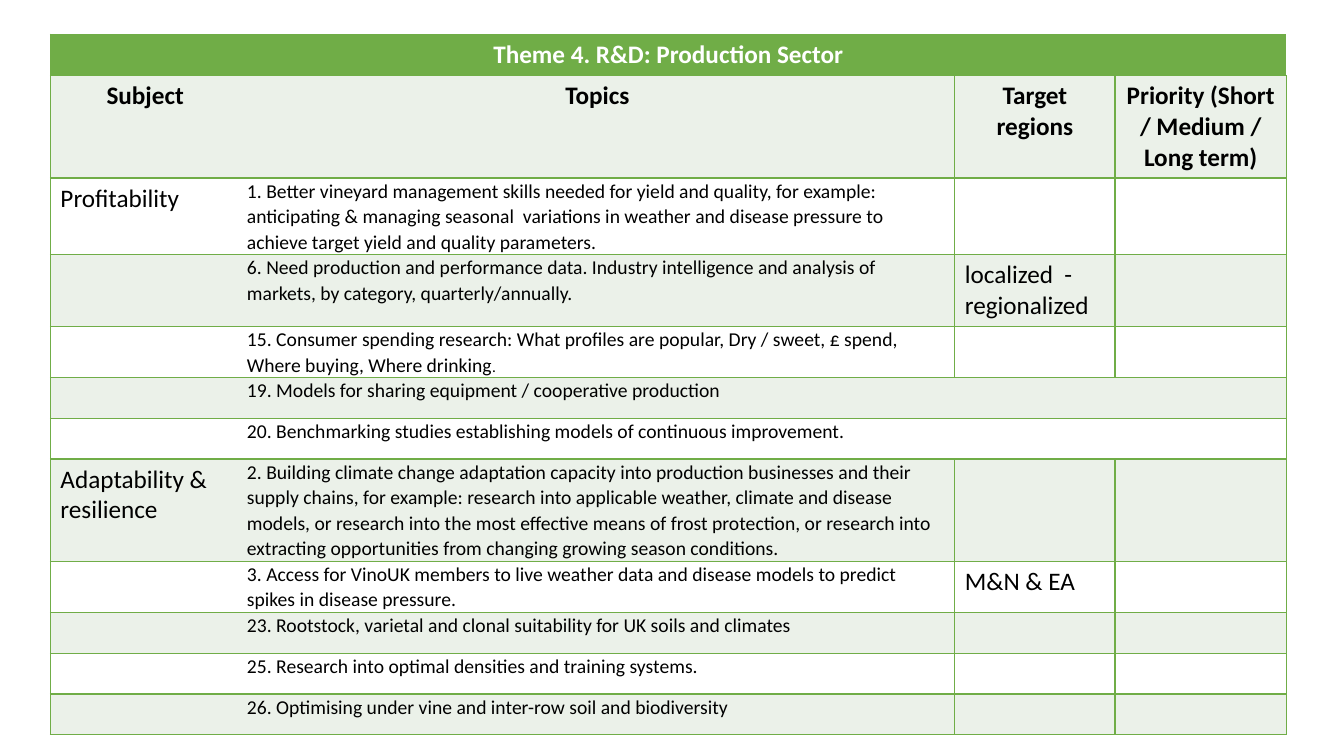
from dataclasses import dataclass
from typing import Optional

import lxml.etree
import pptx
import pptx.dml.color
import pptx.enum.text
import pptx.oxml.ns
import pptx.util

Inches = pptx.util.Inches
Pt = pptx.util.Pt
RGBColor = pptx.dml.color.RGBColor
CENTER = pptx.enum.text.PP_ALIGN.CENTER

GREEN = RGBColor(0x70, 0xAD, 0x47)
PALE_GREEN = RGBColor(0xEB, 0xF1, 0xE9)
WHITE = RGBColor(0xFF, 0xFF, 0xFF)
BLACK = RGBColor(0x00, 0x00, 0x00)

NO_GRID_STYLE = "{2D5ABB26-0587-4C30-8999-92F81FD0307C}"
COLUMN_WIDTHS = (0.48, 0.48, 0.92, 7.09, 1.59, 1.7)
SUBJECT, SUBJECT_END, TOPIC, REGIONS, PRIORITY = 0, 2, 3, 4, 5
HEADINGS = {
    SUBJECT: "Subject",
    TOPIC: "Topics",
    REGIONS: "Target regions",
    PRIORITY: "Priority (Short / Medium / Long term)",
}
THEME_HEIGHT, HEADING_HEIGHT = 0.41, 0.99


@dataclass(frozen=True)
class Topic:
    text: str
    height: float = 0.4
    subject: str = ""
    regions: str = ""
    small_ending: str = ""
    divided: bool = True


TOPICS = (
    Topic("1. Better vineyard management skills needed for yield and quality, for example: "
          "anticipating & managing seasonal  variations in weather and disease pressure to "
          "achieve target yield and quality parameters.", 0.75, subject="Profitability"),
    Topic("6. Need production and performance data. Industry intelligence and analysis of "
          "markets, by category, quarterly/annually.", 0.7, regions="localized  - regionalized"),
    Topic("15. Consumer spending research: What profiles are popular, Dry / sweet, £ spend, "
          "Where buying, Where drinking", 0.5, small_ending="."),
    Topic("19. Models for sharing equipment / cooperative production", divided=False),
    Topic("20. Benchmarking studies establishing models of continuous improvement.", divided=False),
    Topic("2. Building climate change adaptation capacity into production businesses and their "
          "supply chains, for example: research into applicable weather, climate and disease "
          "models, or research into the most effective means of frost protection, or research "
          "into extracting opportunities from changing growing season conditions.", 1.0,
          subject="Adaptability & resilience"),
    Topic("3. Access for VinoUK members to live weather data and disease models to predict "
          "spikes in disease pressure.", 0.5, regions="M&N & EA"),
    Topic("23. Rootstock, varietal and clonal suitability for UK soils and climates"),
    Topic("25. Research into optimal densities and training systems."),
    Topic("26. Optimising under vine and inter-row soil and biodiversity"),
)


def add_text(cell, text: str, *, size: float = 18, bold: bool = False, color: RGBColor = BLACK,
             align: Optional[pptx.enum.text.PP_ALIGN] = None,
             line_spacing: Optional[float] = None) -> None:
    paragraph = cell.text_frame.paragraphs[0]
    paragraph.alignment = align
    paragraph.line_spacing = line_spacing
    run = paragraph.add_run()
    run.text = text
    run.font.name = "Calibri"
    run.font.size = Pt(size)
    run.font.bold = bold
    run.font.color.rgb = color


def add_borders(cell, sides: str) -> None:
    """Draw green lines on the given sides, named by letters in the order LRTB."""
    properties = cell._tc.get_or_add_tcPr()
    for side in sides:
        line = lxml.etree.SubElement(properties, pptx.oxml.ns.qn(f"a:ln{side}"), w=str(Pt(1)))
        fill = lxml.etree.SubElement(line, pptx.oxml.ns.qn("a:solidFill"))
        lxml.etree.SubElement(fill, pptx.oxml.ns.qn("a:srgbClr"), val=str(GREEN))


def format_row(table, row: int, height: float, fill: RGBColor, divided: bool) -> None:
    table.rows[row].height = Inches(height)
    for column in range(len(COLUMN_WIDTHS)):
        cell = table.cell(row, column)
        left = column == SUBJECT or (divided and column in (REGIONS, PRIORITY))
        right = column == PRIORITY or (divided and column in (TOPIC, REGIONS))
        add_borders(cell, "L" * left + "R" * right + "TB")
        cell.fill.solid()
        cell.fill.fore_color.rgb = fill


def fill_topic(table, row: int, topic: Topic) -> None:
    for column, label in ((SUBJECT, topic.subject), (REGIONS, topic.regions)):
        if label:
            add_text(table.cell(row, column), label)
    cell = table.cell(row, TOPIC)
    cell.margin_left = cell.margin_right = Inches(0.07)
    cell.margin_top = cell.margin_bottom = 0
    add_text(cell, topic.text, size=14, line_spacing=1.07)
    if topic.small_ending:
        add_text(cell, topic.small_ending, size=11, line_spacing=1.07)


def add_topic_table(slide) -> None:
    height = THEME_HEIGHT + HEADING_HEIGHT + sum(topic.height for topic in TOPICS)
    frame = slide.shapes.add_table(
        len(TOPICS) + 2, len(COLUMN_WIDTHS),
        Inches(0.5), Inches(0.34), Inches(sum(COLUMN_WIDTHS)), Inches(height))
    table = frame.table
    table._tbl.tblPr.find(pptx.oxml.ns.qn("a:tableStyleId")).text = NO_GRID_STYLE
    for column, width in zip(table.columns, COLUMN_WIDTHS):
        column.width = Inches(width)

    format_row(table, 0, THEME_HEIGHT, GREEN, divided=False)
    table.cell(0, SUBJECT).merge(table.cell(0, PRIORITY))
    add_text(table.cell(0, SUBJECT), "Theme 4. R&D: Production Sector",
             bold=True, color=WHITE, align=CENTER)

    format_row(table, 1, HEADING_HEIGHT, PALE_GREEN, divided=True)
    table.cell(1, SUBJECT).merge(table.cell(1, SUBJECT_END))
    for column, heading in HEADINGS.items():
        add_text(table.cell(1, column), heading, bold=True, align=CENTER)

    for row, topic in enumerate(TOPICS, start=2):
        format_row(table, row, topic.height, PALE_GREEN if row % 2 else WHITE, topic.divided)
        if topic.divided:
            table.cell(row, SUBJECT).merge(table.cell(row, SUBJECT_END))
        fill_topic(table, row, topic)


def main() -> None:
    presentation = pptx.Presentation()
    presentation.slide_width = Inches(13.33)
    presentation.slide_height = Inches(7.5)
    slide = presentation.slides.add_slide(presentation.slide_layouts[6])
    add_topic_table(slide)
    presentation.save("out.pptx")


if __name__ == "__main__":
    main()
